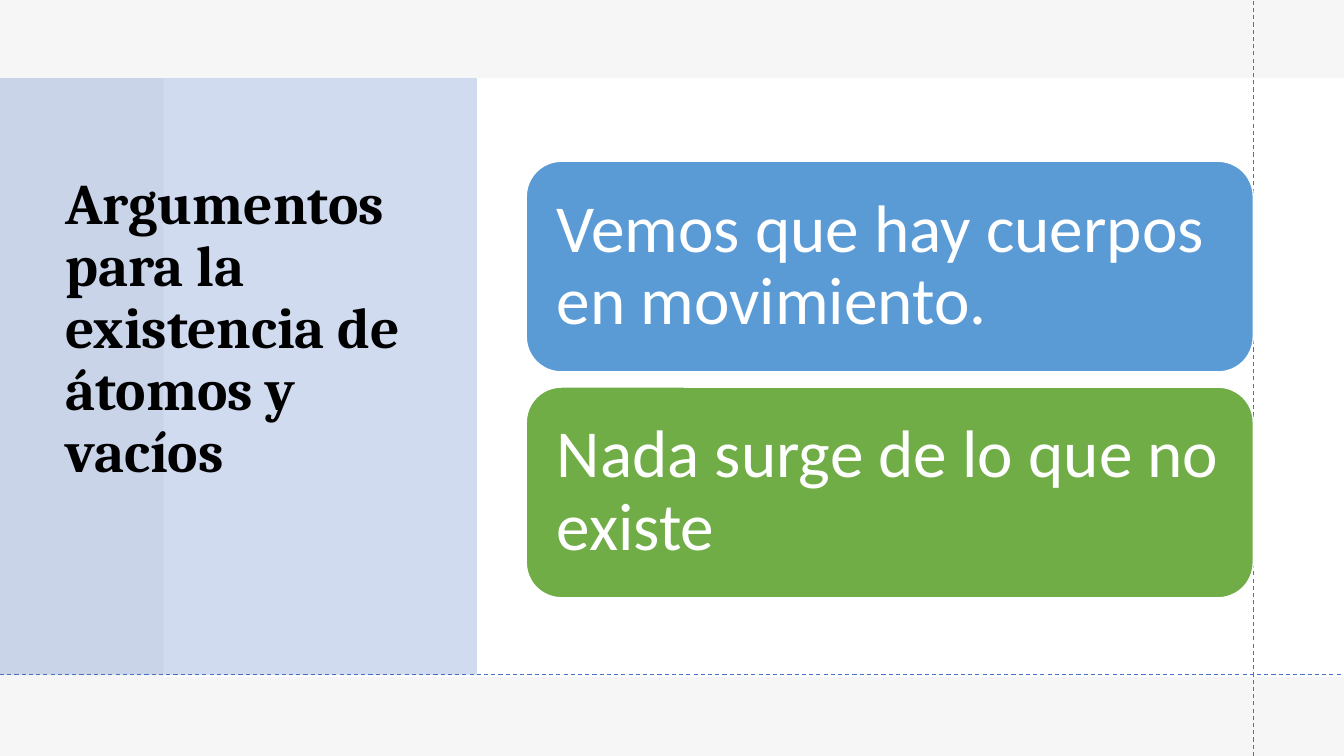
from dataclasses import dataclass

from lxml import etree
from pptx import Presentation
from pptx.dml.color import RGBColor
from pptx.enum.dml import MSO_LINE
from pptx.enum.shapes import MSO_CONNECTOR, MSO_SHAPE
from pptx.enum.text import MSO_ANCHOR, MSO_AUTO_SIZE, PP_ALIGN
from pptx.oxml.ns import qn
from pptx.util import Inches, Pt

RECT, ROUNDED = MSO_SHAPE.RECTANGLE, MSO_SHAPE.ROUNDED_RECTANGLE
STRAIGHT, DASH = MSO_CONNECTOR.STRAIGHT, MSO_LINE.DASH
MIDDLE, LEFT, NO_FIT = MSO_ANCHOR.MIDDLE, PP_ALIGN.LEFT, MSO_AUTO_SIZE.NONE

WHITE = RGBColor(0xFF, 0xFF, 0xFF)
BLACK = RGBColor(0x00, 0x00, 0x00)
PALE = RGBColor(0xF7, 0xF6, 0xF6)
GREY = RGBColor(0xE7, 0xE6, 0xE6)
ACCENT = RGBColor(0x44, 0x72, 0xC4)
BLUE = RGBColor(0x5B, 0x9B, 0xD5)
GREEN = RGBColor(0x70, 0xAD, 0x47)

WIDTH, HEIGHT = Inches(13.33), Inches(7.5)
TITLE_FORMAT = {"name": "Cambria", "size": Pt(41), "bold": True}
CARD_FORMAT = {"name": "Calibri", "size": Pt(48), "bold": False}


@dataclass
class Box:
    """Place in percent of the slide's width and height."""
    left: float
    top: float
    width: float
    height: float

    def emu(self) -> tuple[int, int, int, int]:
        return (across(self.left), down(self.top),
                across(self.width), down(self.height))


@dataclass
class Panel:
    box: Box
    color: RGBColor
    opacity: int = 100


@dataclass
class Guide:
    start: tuple[float, float]
    end: tuple[float, float]


@dataclass
class Card:
    text: str
    color: RGBColor


FULL = Box(0, 0, 100, 100)
PANELS = [
    Panel(FULL, WHITE),
    Panel(FULL, GREY, 35),
    Panel(Box(12.15, 10.33, 87.85, 79.2), WHITE),
    Panel(Box(0, 10.33, 35.48, 78.93), ACCENT, 25),
]
TITLE_BOX = Box(4.13, 9.87, 29.63, 75.87)
GUIDES = [Guide((93.25, 100), (93.25, 0)), Guide((0, 89.2), (100, 89.2))]
CARDS = [
    Card("Vemos que hay cuerpos en movimiento.", BLUE),
    Card("Nada surge de lo que no existe", GREEN),
]
FIRST_CARD = Box(39.16, 21.33, 54.09, 27.87)
CARD_PITCH = 29.87


def across(share: float) -> int:
    return round(WIDTH * share / 100)


def down(share: float) -> int:
    return round(HEIGHT * share / 100)


def add_block(s, kind, box: Box, color: RGBColor):
    sp = s.shapes.add_shape(kind, *box.emu())
    sp.shadow.inherit = False
    sp.fill.solid()
    sp.fill.fore_color.rgb = color
    return sp


def add_panel(s, panel: Panel) -> None:
    sp = add_block(s, RECT, panel.box, panel.color)
    sp.line.fill.background()
    if panel.opacity < 100:
        clr = sp.element.spPr.find(qn("a:solidFill"))[0]
        etree.SubElement(clr, qn("a:alpha"), val=str(panel.opacity * 1000))


def add_guide(s, guide: Guide) -> None:
    (x1, y1), (x2, y2) = guide.start, guide.end
    line = s.shapes.add_connector(STRAIGHT, across(x1), down(y1), across(x2), down(y2))
    line.line.color.rgb = ACCENT
    line.line.width = Pt(0.75)
    line.line.dash_style = DASH
    etree.SubElement(line.element.spPr, qn("a:effectLst"))


def write(sp, text: str, font: dict, color: RGBColor, frame: dict) -> None:
    tf = sp.text_frame
    settings = {"word_wrap": True, "auto_size": NO_FIT, "vertical_anchor": MIDDLE}
    for key, value in (settings | frame).items():
        setattr(tf, key, value)
    p = tf.paragraphs[0]
    p.alignment, p.line_spacing = LEFT, 0.9
    r = p.add_run()
    r.text = text
    for key, value in font.items():
        setattr(r.font, key, value)
    r.font.color.rgb = color


def add_card(s, index: int, card: Card) -> None:
    top = FIRST_CARD.top + index * CARD_PITCH
    box = Box(FIRST_CARD.left, top, FIRST_CARD.width, FIRST_CARD.height)
    sp = add_block(s, ROUNDED, box, card.color)
    sp.line.color.rgb = WHITE
    sp.line.width = Pt(1)
    sides = ("margin_left", "margin_top", "margin_right", "margin_bottom")
    write(sp, card.text, CARD_FORMAT, WHITE, dict.fromkeys(sides, Inches(0.2)))


def main() -> None:
    prs = Presentation()
    prs.slide_width, prs.slide_height = WIDTH, HEIGHT
    s = prs.slides.add_slide(prs.slide_layouts[5])
    s.background.fill.solid()
    s.background.fill.fore_color.rgb = PALE

    # Backdrop and side panel
    for panel in PANELS:
        add_panel(s, panel)

    # Title, raised above the panels and lifted by its bottom margin
    title = s.shapes.title
    title.left, title.top, title.width, title.height = TITLE_BOX.emu()
    s.shapes.element.append(title.element)
    write(title, "Argumentos para la existencia de átomos y vacíos",
          TITLE_FORMAT, BLACK, {"margin_bottom": Inches(0.67)})

    # Dashed guides
    for guide in GUIDES:
        add_guide(s, guide)

    # Argument cards
    for index, card in enumerate(CARDS):
        add_card(s, index, card)

    prs.save("out.pptx")


if __name__ == "__main__":
    main()
